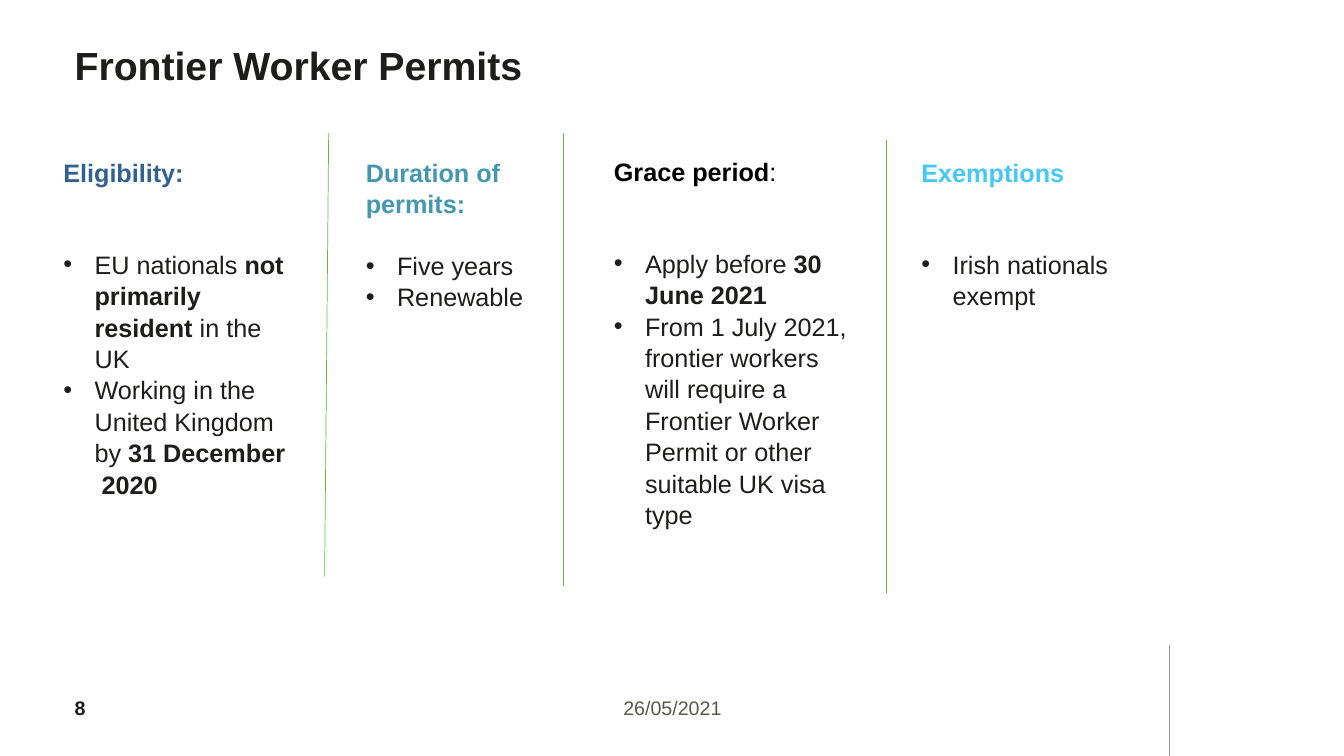
import pptx
import pptx.util
import pptx.dml.color
import pptx.enum.shapes
import pptx.enum.text
import lxml.etree

Inches, Pt = pptx.util.Inches, pptx.util.Pt
RGB = pptx.dml.color.RGBColor
PP_ALIGN, ANCHOR = pptx.enum.text.PP_ALIGN, pptx.enum.text.MSO_ANCHOR

INK = RGB(0x1D, 0x1D, 0x1B)
BLACK = RGB(0, 0, 0)
BLUE = RGB(0x31, 0x60, 0x91)
TEAL = RGB(0x43, 0x97, 0xAE)
SKY = RGB(0x44, 0xC8, 0xF5)
GREEN = RGB(0x61, 0xBB, 0x46)
GREY = RGB(0x99, 0x99, 0x99)
DATE_GREY = RGB(0x58, 0x58, 0x52)

# Content: a run is (text, bold)
TITLE = "Frontier Worker Permits"
PAGE, DATE = "8", "26/05/2021"
# heading runs, colour, heading lines, (left, top, width, height), bullets
COLUMNS = [
    ([("Eligibility:", True)], BLUE, 1, (0.53, 1.5, 2.41, 3.43), [
        [("EU nationals ", False), ("not primarily resident ", True), ("in the UK", False)],
        [("Working in the United Kingdom by ", False), ("31 December  2020", True)]]),
    ([("Duration of permits:", True)], TEAL, 2, (3.53, 1.5, 2.21, 1.62), [
        [("Five years", False)],
        [("Renewable", False)]]),
    ([("Grace period", True), (":", False)], BLACK, 1, (5.99, 1.49, 2.55, 3.74), [
        [("Apply before ", False), ("30 June 2021", True)],
        [("From 1 July 2021, frontier workers will require a Frontier Worker "
          "Permit or other suitable UK visa type", False)]]),
    ([("Exemptions", True)], SKY, 1, (9.04, 1.5, 2.21, 1.62), [
        [("Irish nationals exempt", False)]]),
]
# x1, y1, x2, y2, colour, weight
RULES = [
    (3.22, 5.72, 3.26, 1.32, GREEN, 0.5),
    (5.59, 5.81, 5.59, 1.32, GREEN, 0.5),
    (8.79, 5.88, 8.79, 1.39, GREEN, 0.5),
    (11.6, 6.4, 11.6, 7.5, GREY, 1.25),
]
BODY_SIZE, LINE_SPACING, LINE_PITCH = 18, 1.04, 21.5
BULLET_ROW = 3  # text line on which the bullets begin
INDENT = Inches(0.31)
A = "{http://schemas.openxmlformats.org/drawingml/2006/main}"


def add_runs(p, runs, size, color):
    for text, bold in runs:
        r = p.add_run()
        r.text = text
        r.font.name, r.font.size, r.font.bold = "Arial", Pt(size), bold
        r.font.color.rgb = color


def set_bullet(p):
    ppr = p._p.get_or_add_pPr()
    ppr.set("marL", str(INDENT))
    ppr.set("indent", str(-INDENT))
    lxml.etree.SubElement(ppr, A + "buFont").set("typeface", "Arial")
    lxml.etree.SubElement(ppr, A + "buChar").set("char", "•")


def add_box(s, box):
    tf = s.shapes.add_textbox(*map(Inches, box)).text_frame
    tf.word_wrap = True
    return tf


def clear_margins(tf):
    tf.margin_left = tf.margin_right = tf.margin_top = tf.margin_bottom = 0


prs = pptx.Presentation()
prs.slide_width, prs.slide_height = Inches(13.33), Inches(7.5)
s = prs.slides.add_slide(prs.slide_layouts[5])

# Title
title = s.shapes.title
title.left, title.top, title.width, title.height = map(Inches, (0.74, 0.39, 10.66, 0.98))
tf = title.text_frame
clear_margins(tf)
tf.word_wrap, tf.vertical_anchor = True, ANCHOR.TOP
tf.auto_size = pptx.enum.text.MSO_AUTO_SIZE.NONE
p = tf.paragraphs[0]
p.alignment, p.line_spacing = PP_ALIGN.LEFT, LINE_SPACING
add_runs(p, [(TITLE, True)], 28, INK)

# Dividers
for x1, y1, x2, y2, color, weight in RULES:
    line = s.shapes.add_connector(pptx.enum.shapes.MSO_CONNECTOR.STRAIGHT,
                                  *map(Inches, (x1, y1, x2, y2)))
    line.line.color.rgb, line.line.width = color, Pt(weight)
    lxml.etree.SubElement(line._element.spPr, A + "effectLst")

# Columns
for heading, color, heading_lines, box, bullets in COLUMNS:
    tf = add_box(s, box)
    p = tf.paragraphs[0]
    p.line_spacing = LINE_SPACING
    add_runs(p, heading, BODY_SIZE, color)
    for i, runs in enumerate(bullets):
        p = tf.add_paragraph()
        p.line_spacing = LINE_SPACING
        if i == 0:
            p.space_before = Pt((BULLET_ROW - heading_lines) * LINE_PITCH)
        set_bullet(p)
        add_runs(p, runs, BODY_SIZE, INK)

# Footer
tf = add_box(s, (4.42, 6.86, 4.5, 0.34))
tf.paragraphs[0].alignment = PP_ALIGN.CENTER
add_runs(tf.paragraphs[0], [(DATE, False)], 14, DATE_GREY)
tf = add_box(s, (0.74, 6.82, 0.74, 0.4))
clear_margins(tf)
tf.vertical_anchor = ANCHOR.MIDDLE
add_runs(tf.paragraphs[0], [(PAGE, True)], 14, INK)

prs.save("out.pptx")
